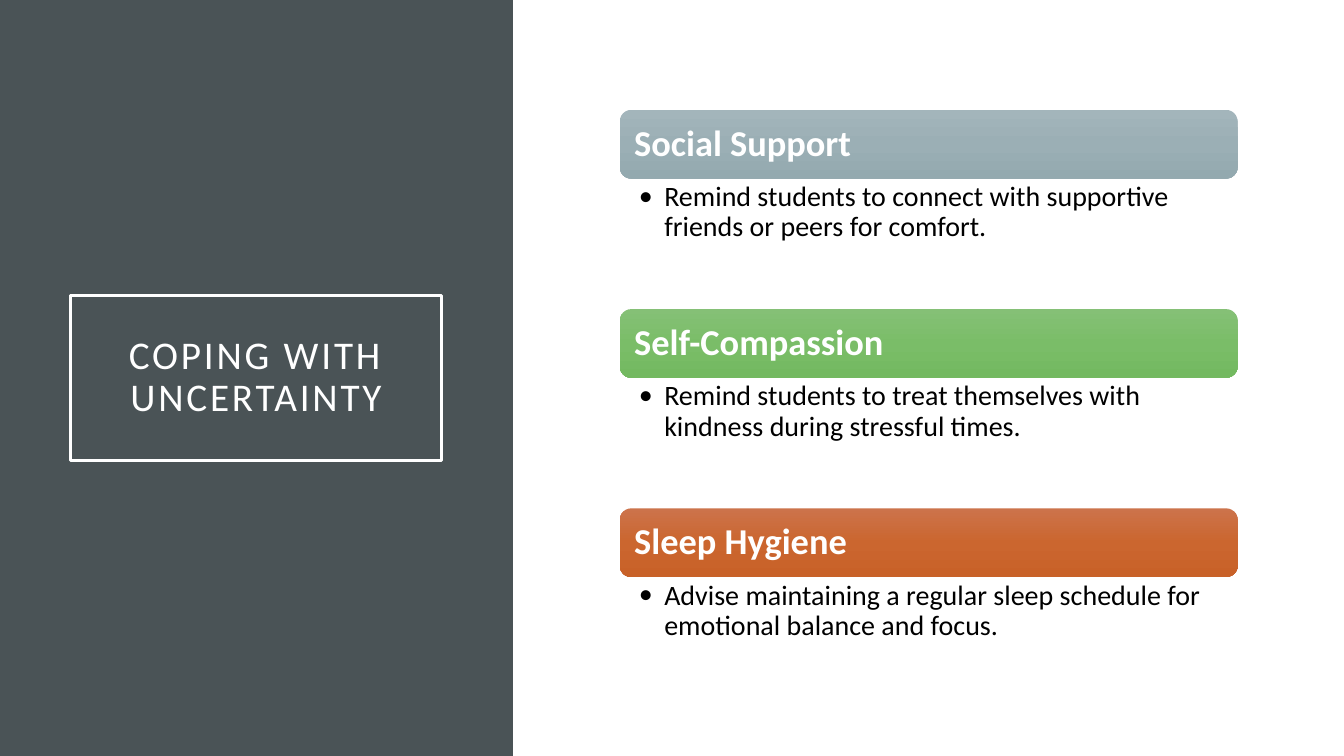
from copy import deepcopy

from lxml.etree import SubElement
from pptx import Presentation
from pptx.dml.color import RGBColor
from pptx.enum.shapes import MSO_SHAPE
from pptx.enum.text import MSO_ANCHOR, MSO_AUTO_SIZE, PP_ALIGN
from pptx.oxml.ns import qn
from pptx.util import Cm, Pt


def color(hex_string):
    return RGBColor.from_string(hex_string)


def write_text(box, text, frame_format, para_format, font_format, font_color):
    frame = box.text_frame
    para = frame.paragraphs[0]
    span = para.add_run()
    span.text = text
    span.font.color.rgb = color(font_color)
    frame_defaults = {"word_wrap": True, "auto_size": MSO_AUTO_SIZE.NONE}
    para_defaults = {"line_spacing": 0.9, "space_before": Pt(0)}
    for target, values in (
        (frame, frame_defaults | frame_format),
        (para, para_defaults | para_format),
        (span.font, {"name": "Calibri"} | font_format),
    ):
        for name, value in values.items():
            setattr(target, name, value)
    return para, span


sides = ("margin_left", "margin_top", "margin_right", "margin_bottom")
title_frame = dict.fromkeys(sides, Cm(0.51)) | {"vertical_anchor": MSO_ANCHOR.MIDDLE}
heading_frame = dict.fromkeys(sides, Cm(0.28)) | {"vertical_anchor": MSO_ANCHOR.MIDDLE}
list_frame = dict(zip(sides, (Cm(0.48), Cm(0.1), Cm(0.51), Cm(0.1))))
list_frame["vertical_anchor"] = MSO_ANCHOR.TOP

deck = Presentation()
deck.slide_width, deck.slide_height = Cm(33.87), Cm(19.05)
comparison_layout = deck.slide_layouts.get_by_name("Comparison")
page = deck.slides.add_slide(comparison_layout)
title, *lists, spare = page.placeholders
spare.element.getparent().remove(spare.element)

panel = page.shapes.add_shape(MSO_SHAPE.RECTANGLE, 0, 0, Cm(12.93), deck.slide_height)
panel.shadow.inherit = False
panel.fill.solid()
panel.fill.fore_color.rgb = color("4A5356")
panel.line.fill.background()
title.element.addprevious(panel.element)

title.left, title.top, title.width, title.height = Cm(1.78), Cm(7.44), Cm(9.35), Cm(4.17)
title.line.color.rgb = color("FFFFFF")
title.line.width = Pt(2.5)
para, span = write_text(
    title, "COPING WITH UNCERTAINTY", title_frame,
    {"alignment": PP_ALIGN.CENTER}, {"size": Pt(28), "bold": False}, "FFFFFF",
)
span.font._element.set("spc", "200")

topics = [
    ("Social Support", ("A3B5BB", "9BAFB5", "93A9AF"),
     "Remind students to connect with supportive friends or peers for comfort."),
    ("Self-Compassion", ("85C076", "7ABD68", "73B960"),
     "Remind students to treat themselves with kindness during stressful times."),
    ("Sleep Hygiene", ("CC734B", "CB662F", "C86128"),
     "Advise maintaining a regular sleep schedule for emotional balance and focus."),
]
left, first_top, width, bar_height, pitch = Cm(15.62), Cm(2.77), Cm(15.57), Cm(1.73), Cm(5.02)

for index, (box, (heading, shades, advice)) in enumerate(zip(lists, topics)):
    top = first_top + index * pitch
    bar = page.shapes.add_shape(MSO_SHAPE.ROUNDED_RECTANGLE, left, top, width, bar_height)
    bar.shadow.inherit = False
    bar.line.fill.background()
    bar.fill.gradient()
    bar.fill.gradient_angle = 270
    stop_list = bar.element.find(".//" + qn("a:gsLst"))
    stop_list.append(deepcopy(stop_list[0]))
    for stop, position, shade in zip(bar.fill.gradient_stops, (0, 0.5, 1), shades):
        stop.position = position
        stop.color.rgb = color(shade)
    write_text(
        bar, heading, heading_frame,
        {"alignment": PP_ALIGN.LEFT}, {"size": Pt(26), "bold": True}, "FFFFFF",
    )

    box.left, box.top, box.width, box.height = left, top + bar_height, width, pitch - bar_height
    para, span = write_text(
        box, advice, list_frame,
        {"alignment": PP_ALIGN.LEFT}, {"size": Pt(20), "bold": False}, "000000",
    )
    properties = para._p.get_or_add_pPr()
    properties.set("marL", str(Cm(0.64)))
    properties.set("indent", str(-Cm(0.64)))
    SubElement(properties, qn("a:buFont"), typeface="Calibri")
    SubElement(properties, qn("a:buChar"), char="•")

deck.save("out.pptx")
